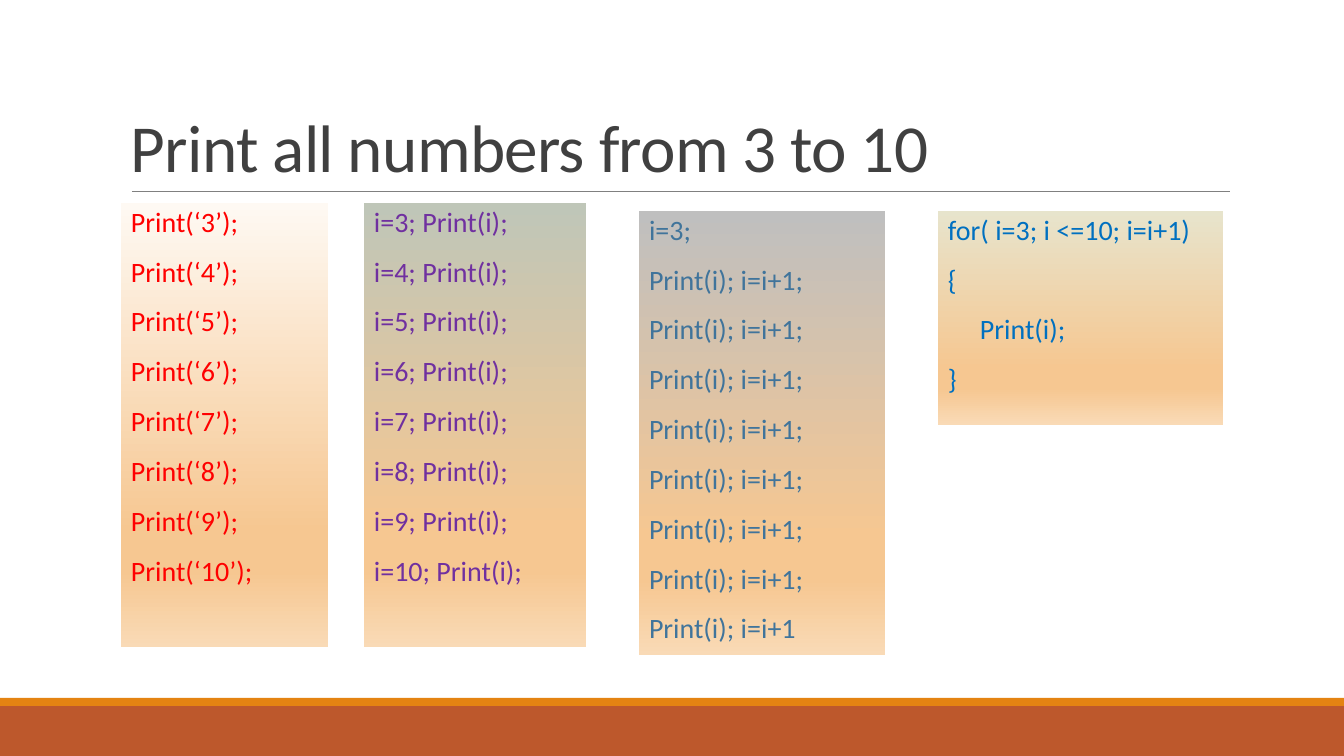
from lxml.etree import SubElement
from pptx import Presentation
from pptx.dml.color import RGBColor
from pptx.enum.shapes import MSO_CONNECTOR, MSO_SHAPE
from pptx.enum.text import MSO_ANCHOR, PP_ALIGN
from pptx.oxml.ns import qn
from pptx.util import Pt

EMU_PER_PX = 914400 / 100.8
WIDTH, HEIGHT = 1344, 756
FONT = "Calibri"

RUST = RGBColor(0xBD, 0x58, 0x2C)
ORANGE = RGBColor(0xE4, 0x83, 0x12)
GRAY = RGBColor(0x80, 0x80, 0x80)
CHARCOAL = RGBColor(0x40, 0x40, 0x40)
PEACH = RGBColor(0xF6, 0xC7, 0x91)
LIGHT_PEACH = RGBColor(0xF9, 0xDA, 0xB6)
CREAM = RGBColor(0xFE, 0xF9, 0xF3)
SAGE = RGBColor(0xBF, 0xC6, 0xB8)
SILVER = RGBColor(0xBF, 0xBF, 0xBF)
SAND = RGBColor(0xE7, 0xE4, 0xCC)
RED = RGBColor(0xFF, 0x00, 0x00)
PURPLE = RGBColor(0x70, 0x30, 0xA0)
STEEL = RGBColor(0x40, 0x74, 0x9B)
BLUE = RGBColor(0x00, 0x70, 0xC0)


def px(length):
    return round(length * EMU_PER_PX)


class SlideBuilder:
    def __init__(self, deck):
        self.page = deck.slides.add_slide(deck.slide_layouts[6])

    def rectangle(self, left, top, width, height):
        box = self.page.shapes.add_shape(
            MSO_SHAPE.RECTANGLE, px(left), px(top), px(width), px(height))
        box.shadow.inherit = False
        box.line.fill.background()
        return box

    def bar(self, top, height, color):
        box = self.rectangle(0, top, WIDTH, height)
        box.fill.solid()
        box.fill.fore_color.rgb = color

    def rule(self, left, right, y):
        line = self.page.shapes.add_connector(
            MSO_CONNECTOR.STRAIGHT, px(left), px(y), px(right), px(y))
        line.line.color.rgb = GRAY
        line.line.width = Pt(0.5)
        SubElement(line._element.spPr, qn("a:effectLst"))

    def style(self, paragraph, size, color, spacing):
        paragraph.alignment = PP_ALIGN.LEFT
        paragraph.line_spacing = spacing
        for span in paragraph.runs:
            span.font.name = FONT
            span.font.size = Pt(size)
            span.font.color.rgb = color

    def title(self, left, top, width, height, text):
        box = self.page.shapes.add_textbox(px(left), px(top), px(width), px(height))
        frame = box.text_frame
        frame.word_wrap = True
        frame.vertical_anchor = MSO_ANCHOR.BOTTOM
        frame.text = text
        para = frame.paragraphs[0]
        self.style(para, 48, CHARCOAL, 0.85)
        para.runs[0].font._element.set("spc", "-50")

    def gradient(self, box, top_color):
        box.fill.gradient()
        box.fill.gradient_angle = 270
        stops = box._element.spPr.find(qn("a:gradFill")).find(qn("a:gsLst"))
        stops.clear()
        for percent, color in ((0, top_color), (74, PEACH), (83, PEACH), (100, LIGHT_PEACH)):
            stop = SubElement(stops, qn("a:gs"), pos=str(percent * 1000))
            SubElement(stop, qn("a:srgbClr"), val=str(color))

    def code(self, left, top, width, height, top_color, color, lines, indented=()):
        box = self.rectangle(left, top, width, height)
        self.gradient(box, top_color)
        frame = box.text_frame
        frame.word_wrap = True
        frame.vertical_anchor = MSO_ANCHOR.TOP
        frame.margin_left = frame.margin_right = 0
        frame.margin_top = frame.margin_bottom = px(5)
        frame.text = "\n".join(lines)
        for index, para in enumerate(frame.paragraphs):
            self.style(para, 20, color, 0.9)
            para.space_before = Pt(12)
            para.space_after = Pt(2)
            margin = 42 if index in indented else 10
            para._p.get_or_add_pPr().set("marL", str(px(margin)))


def main():
    deck = Presentation()
    deck.slide_width, deck.slide_height = px(WIDTH), px(HEIGHT)
    slide = SlideBuilder(deck)

    slide.bar(706, 50, RUST)
    slide.bar(698, 8, ORANGE)
    slide.rule(132, 1230, 191)
    slide.title(121, 31, 1109, 160, "Print all numbers from 3 to 10")

    numbers = range(3, 11)
    slide.code(121, 203, 207, 444, CREAM, RED,
               [f"Print(‘{number}’);" for number in numbers])
    slide.code(364, 203, 222, 444, SAGE, PURPLE,
               [f"i={number}; Print(i);" for number in numbers])
    slide.code(639, 211, 246, 444, SILVER, STEEL,
               ["i=3;"] + ["Print(i); i=i+1;"] * 7 + ["Print(i); i=i+1"])
    slide.code(938, 211, 285, 214, SAND, BLUE,
               ["for( i=3; i <=10; i=i+1)", "{", "Print(i);", "}"], indented=(2,))

    deck.save("out.pptx")


if __name__ == "__main__":
    main()
